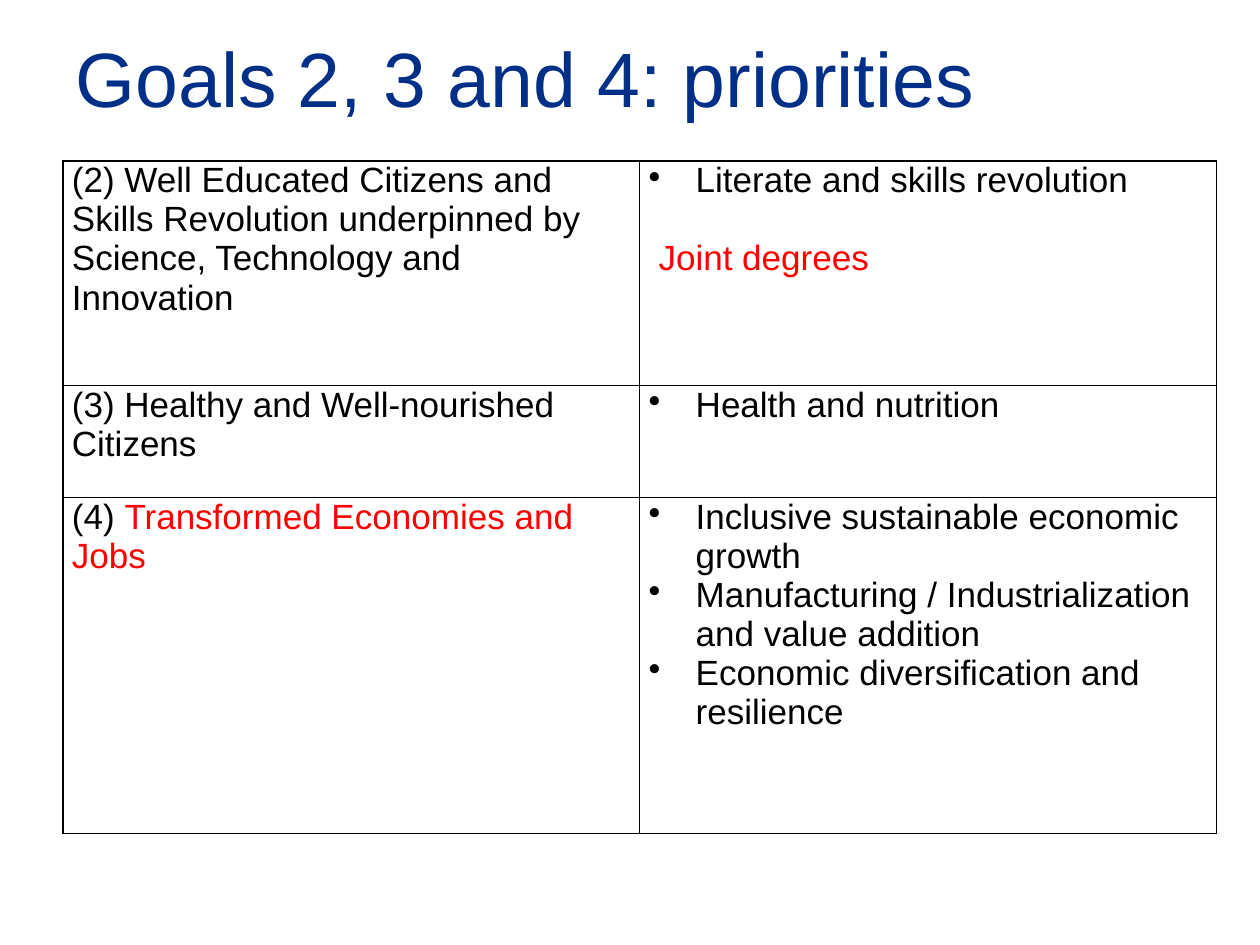
import pptx
import pptx.dml.color
import pptx.enum.text
import pptx.oxml
import pptx.oxml.ns
import pptx.util
from pptx.util import Cm, Pt

NAVY = pptx.dml.color.RGBColor(0x00, 0x2F, 0x87)
BLACK = pptx.dml.color.RGBColor(0x00, 0x00, 0x00)
RED = pptx.dml.color.RGBColor(0xFF, 0x00, 0x00)
FONT = "Arial"
ROW_UNIT = Cm(2.26)
BULLET_INDENT = Cm(0.95)
NOTE_INDENT = Cm(0.2)

GOALS = [
    (2, [("(2) Well Educated Citizens and Skills Revolution underpinned by "
          "Science, Technology and Innovation", BLACK)],
     ["Literate and skills revolution"], "Joint degrees"),
    (1, [("(3) Healthy and Well-nourished Citizens", BLACK)],
     ["Health and nutrition"], None),
    (3, [("(4) ", BLACK), ("Transformed Economies and Jobs", RED)],
     ["Inclusive sustainable economic growth",
      "Manufacturing / Industrialization and value addition",
      "Economic diversification and resilience"], None),
]


def style_paragraph(para, size):
    """Set the shared font, size and left alignment of a paragraph."""
    para.alignment = pptx.enum.text.PP_ALIGN.LEFT
    para.font.name = FONT
    para.font.size = Pt(size)


def add_spans(para, spans):
    """Write coloured spans into a paragraph of a table cell."""
    style_paragraph(para, 20)
    for text, color in spans:
        span = para.add_run()
        span.text = text
        span.font.color.rgb = color


def add_bullet(para):
    """Give a paragraph a hanging round bullet."""
    properties = para._p.get_or_add_pPr()
    properties.set("marL", str(BULLET_INDENT))
    properties.set("indent", str(-BULLET_INDENT))
    bullet = pptx.oxml.ns.qn("a:buChar")
    properties.makeelement(bullet)
    pptx.oxml.parse_xml
    properties.append(properties.makeelement(bullet, {"char": "•"}))


def format_cell(cell):
    """Clear a cell's fill, set its margins and draw its four borders."""
    cell.fill.background()
    cell.margin_left = cell.margin_right = Cm(0.18)
    cell.margin_top = cell.margin_bottom = 0
    cell.vertical_anchor = pptx.enum.text.MSO_ANCHOR.TOP
    properties = cell._tc.get_or_add_tcPr()
    for position, side in enumerate(("lnL", "lnR", "lnT", "lnB")):
        border = pptx.oxml.parse_xml(
            f'<a:{side} {pptx.oxml.ns.nsdecls("a")} w="{Pt(1)}"><a:solidFill>'
            f'<a:srgbClr val="{BLACK}"/></a:solidFill></a:{side}>')
        properties.insert(position, border)


def fill_priorities(frame, priorities, note):
    """Write the bulleted priorities and an optional red note."""
    for index, priority in enumerate(priorities):
        para = frame.add_paragraph() if index else frame.paragraphs[0]
        add_spans(para, [(priority, BLACK)])
        add_bullet(para)
    if note:
        para = frame.add_paragraph()
        para.space_before = Pt(22)
        add_spans(para, [(note, RED)])
        para._p.get_or_add_pPr().set("marL", str(NOTE_INDENT))


def place_title(page, left, top, width, height):
    """Place and format the slide title."""
    title = page.shapes.title
    title.left, title.top, title.width, title.height = left, top, width, height
    frame = title.text_frame
    frame.text = "Goals 2, 3 and 4: priorities"
    frame.vertical_anchor = pptx.enum.text.MSO_ANCHOR.MIDDLE
    para = frame.paragraphs[0]
    style_paragraph(para, 44)
    para.font.color.rgb = NAVY


def place_goals(page, left, top, width):
    """Place the table of goals and their priorities."""
    units = sum(goal[0] for goal in GOALS)
    table = page.shapes.add_table(
        len(GOALS), 2, left, top, width, ROW_UNIT * units).table
    table.first_row = table.horz_banding = False
    for row, (share, spans, priorities, note) in enumerate(GOALS):
        table.rows[row].height = ROW_UNIT * share
        goal_cell, priority_cell = table.cell(row, 0), table.cell(row, 1)
        format_cell(goal_cell)
        format_cell(priority_cell)
        add_spans(goal_cell.text_frame.paragraphs[0], spans)
        fill_priorities(priority_cell.text_frame, priorities, note)


def main():
    """Build the slide and save the deck."""
    deck = pptx.Presentation()
    deck.slide_width, deck.slide_height = Cm(25.4), Cm(19.05)
    page = deck.slides.add_slide(deck.slide_layouts[5])
    place_title(page, Cm(1.27), Cm(0.28), Cm(22.86), Cm(2.54))
    place_goals(page, Cm(1.27), Cm(3.25), Cm(23.25))
    deck.save("out.pptx")


if __name__ == "__main__":
    main()
